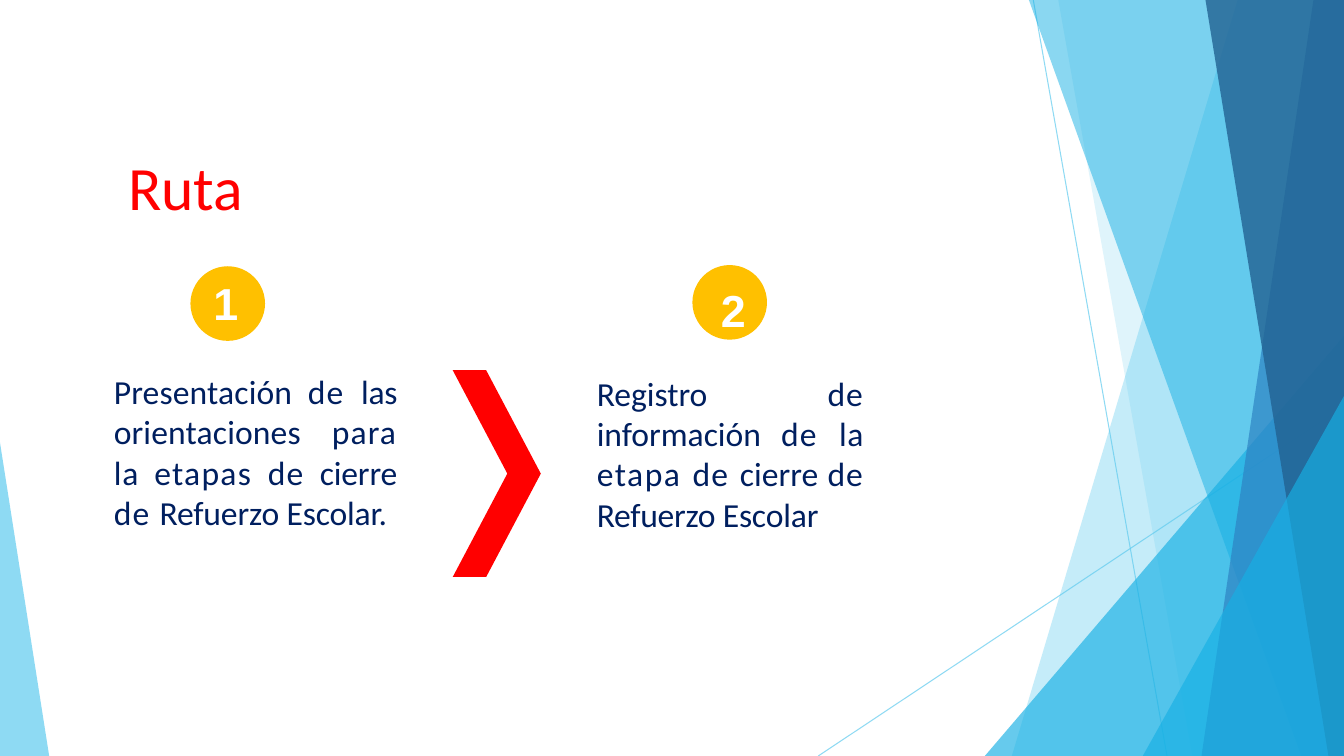
from dataclasses import dataclass

from lxml import etree
from pptx import Presentation
from pptx.dml.color import RGBColor
from pptx.enum.shapes import MSO_CONNECTOR, MSO_SHAPE
from pptx.enum.text import PP_ALIGN
from pptx.oxml.ns import qn
from pptx.util import Cm, Pt

STRAIGHT = MSO_CONNECTOR.STRAIGHT
TRIANGLE = MSO_SHAPE.ISOSCELES_TRIANGLE
CHEVRON = MSO_SHAPE.CHEVRON
OVAL = MSO_SHAPE.OVAL
LEFT, CENTER, JUSTIFY = PP_ALIGN.LEFT, PP_ALIGN.CENTER, PP_ALIGN.JUSTIFY

SKY = RGBColor(0x5F, 0xCB, 0xEF)
CYAN = RGBColor(0x17, 0xB0, 0xE4)
BLUE = RGBColor(0x2E, 0x83, 0xC3)
DEEP = RGBColor(0x22, 0x62, 0x92)
RED = RGBColor(0xFF, 0x00, 0x00)
AMBER = RGBColor(0xFF, 0xC0, 0x00)
NAVY = RGBColor(0x00, 0x1F, 0x5F)
WHITE = RGBColor(0xFF, 0xFF, 0xFF)

WIDTH, HEIGHT = 33.87, 19.05
BADGE_SIZE = 1.88


@dataclass
class Ray:
    x1: float
    y1: float
    x2: float


@dataclass
class Band:
    top_x: float
    bottom_x: float
    color: RGBColor
    opacity: int


@dataclass
class Wedge:
    left: float
    top: float
    width: float
    apex: float
    color: RGBColor
    opacity: int


@dataclass
class Style:
    font: str
    size: int
    color: RGBColor
    bold: bool = False


@dataclass
class Para:
    style: Style
    runs: list[tuple[str, float]]
    before: float
    align: PP_ALIGN = LEFT
    indent: float = 0


@dataclass
class Box:
    left: float
    top: float
    width: float
    height: float
    paras: list[Para]


TITLE = Style("Calibri", 44, RED)
NUMBER = Style("Arial", 32, WHITE, True)
BODY = Style("Calibri", 24, NAVY)

RAYS = [Ray(26.04, 0, 29.41), Ray(WIDTH, 10.24, 20.62)]
FACETS = [
    Band(31.19, 25.5, SKY, 36),
    Band(26.67, 30.05, SKY, 20),
    Wedge(24.82, 8.46, 9.05, 1, CYAN, 66),
    Band(25.93, 32.79, CYAN, 50),
    Band(33.1, 30.28, BLUE, 70),
    Band(30.38, 33.48, DEEP, 80),
    Wedge(28.8, 9.98, 5.07, 1, CYAN, 66),
    Wedge(0, 11.15, 1.24, 0, SKY, 70),
]
BADGES = [(4.8, 6.71), (17.45, 6.68)]
BOXES = [
    Box(3.23, 3.73, 10.67, 1.9, [Para(TITLE, [("Ruta", -0.2)], 0.9)]),
    Box(5.38, 6.91, 0.71, 1.42, [Para(NUMBER, [("1", -0.5)], 1.1)]),
    Box(2.87, 9.32, 7.14, 5.16, [
        Para(BODY, [
            ("Presentación ", 0.1), ("de ", 0.9), ("las ", -0.2),
            ("orientaciones ", 0.1), ("para ", 0.8), ("la ", 0.6),
            ("etapas ", 0.9), ("de ", 0.8), ("cierre ", -0.1),
            ("de ", 0.9), ("Refuerzo Escolar.", -0.1),
        ], 0.9, JUSTIFY),
    ]),
    Box(15.04, 7.09, 6.73, 7.47, [
        Para(NUMBER, [("2", -0.5)], 1.1, CENTER, 0.15),
        Para(BODY, [
            ("Registro ", 0), ("de ", 0.7), ("información ", 0),
            ("de ", 0.9), ("la ", 0.3), ("etapa ", 1.1), ("de ", 0.9),
            ("cierre ", 0), ("de ", 0.7), ("Refuerzo ", -0.2),
            ("Escolar", -0.1),
        ], 25.9, JUSTIFY),
    ]),
]


def set_opacity(sp, percent: int) -> None:
    for clr in sp._element.spPr.iter(qn("a:srgbClr")):
        etree.SubElement(clr, qn("a:alpha")).set("val", str(percent * 1000))


def paint(sp, color: RGBColor) -> None:
    sp.shadow.inherit = False
    sp.fill.solid()
    sp.fill.fore_color.rgb = color
    sp.line.fill.background()


def add_preset(s, kind, left: float, top: float, width: float,
               height: float, color: RGBColor):
    sp = s.shapes.add_shape(kind, Cm(left), Cm(top), Cm(width), Cm(height))
    paint(sp, color)
    return sp


def add_ray(s, ray: Ray) -> None:
    line = s.shapes.add_connector(
        STRAIGHT, Cm(ray.x1), Cm(ray.y1), Cm(ray.x2), Cm(HEIGHT))
    line.line.color.rgb = SKY
    line.line.width = Pt(0.75)
    set_opacity(line, 70)
    etree.SubElement(line._element.spPr, qn("a:effectLst"))


def add_facet(s, facet: Band | Wedge) -> None:
    if isinstance(facet, Band):
        fb = s.shapes.build_freeform(Cm(facet.top_x), 0)
        fb.add_line_segments([
            (Cm(WIDTH), 0), (Cm(WIDTH), Cm(HEIGHT)),
            (Cm(facet.bottom_x), Cm(HEIGHT))])
        sp = fb.convert_to_shape()
        paint(sp, facet.color)
    else:
        sp = add_preset(s, TRIANGLE, facet.left, facet.top, facet.width,
                        HEIGHT - facet.top, facet.color)
        sp.adjustments[0] = facet.apex
    set_opacity(sp, facet.opacity)


def add_box(s, box: Box) -> None:
    sp = s.shapes.add_textbox(
        Cm(box.left), Cm(box.top), Cm(box.width), Cm(box.height))
    tf = sp.text_frame
    tf.word_wrap = True
    tf.margin_left = tf.margin_right = tf.margin_bottom = 0
    tf.margin_top = Cm(0.03)
    for i, para in enumerate(box.paras):
        p = tf.add_paragraph() if i else tf.paragraphs[0]
        p.alignment = para.align
        p.space_before = Pt(para.before)
        p._p.get_or_add_pPr().set("marL", str(Cm(para.indent)))
        for text, spacing in para.runs:
            r = p.add_run()
            r.text = text
            r.font.name = para.style.font
            r.font.size = Pt(para.style.size)
            r.font.bold = para.style.bold
            r.font.color.rgb = para.style.color
            r._r.get_or_add_rPr().set("spc", str(round(spacing * 100)))


def main() -> None:
    prs = Presentation()
    prs.slide_width, prs.slide_height = Cm(WIDTH), Cm(HEIGHT)
    s = prs.slides.add_slide(prs.slide_layouts[6])
    for ray in RAYS:
        add_ray(s, ray)
    for facet in FACETS:
        add_facet(s, facet)
    chevron = add_preset(s, CHEVRON, 11.41, 9.33, 2.22, 5.21, RED)
    chevron.adjustments[0] = 0.62
    for left, top in BADGES:
        add_preset(s, OVAL, left, top, BADGE_SIZE, BADGE_SIZE, AMBER)
    for box in BOXES:
        add_box(s, box)
    prs.save("out.pptx")


if __name__ == "__main__":
    main()
